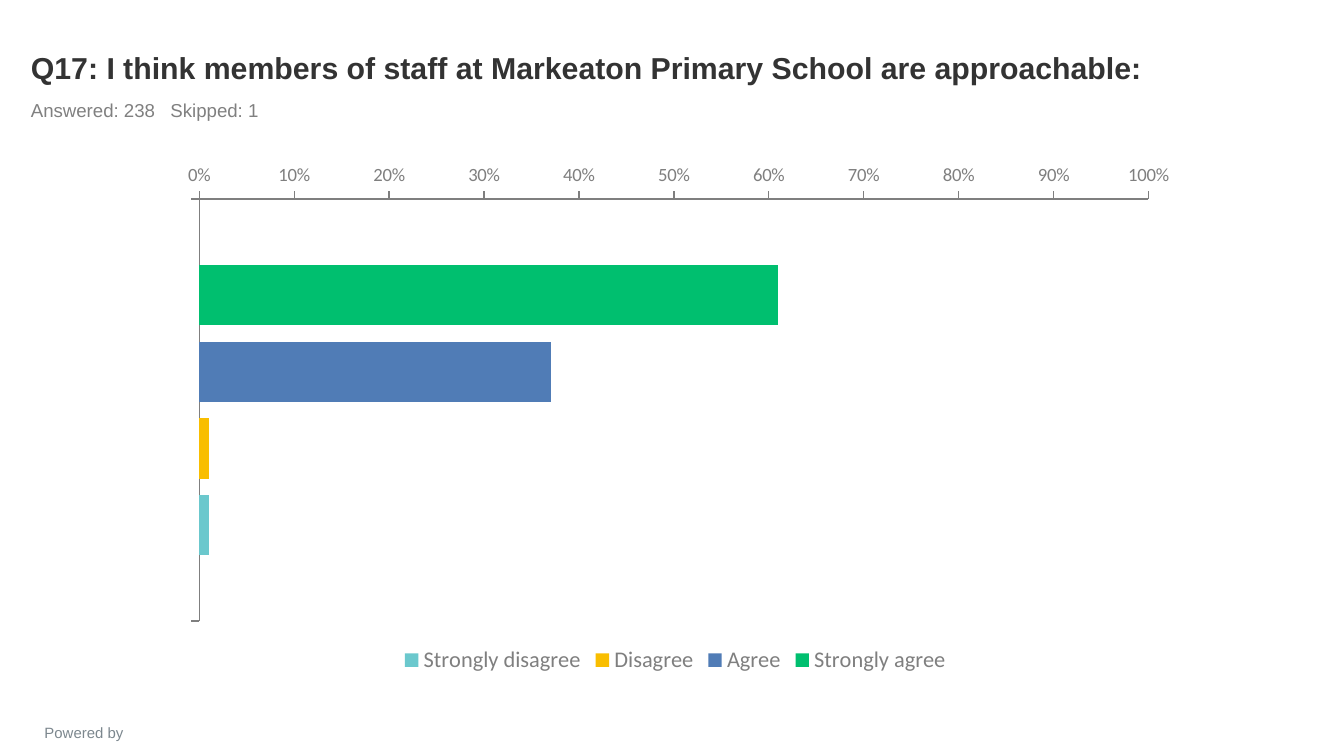
from lxml import etree
from pptx import Presentation
from pptx import util as u
from pptx.chart.data import CategoryChartData
from pptx.dml.color import RGBColor
from pptx.enum import chart as charts, text
from pptx.oxml import ns

COLORS = {
    "title": "333333",
    "subtitle": "808080",
    "axis": "7F7F7F",
    "footer": "7C878E",
}
ANSWERS = [
    ("Strongly agree", 0.61, "00BF6F"),
    ("Agree", 0.37, "507CB6"),
    ("Disagree", 0.01, "F9BE00"),
    ("Strongly disagree", 0.01, "6BC8CD"),
]


def style_font(font, name, size, color, bold=False):
    font.name = name
    font.size = u.Pt(size)
    font.bold = bold
    font.color.rgb = RGBColor.from_string(color)


def place(shape, box):
    shape.left, shape.top, shape.width, shape.height = (u.Cm(n) for n in box)


def write_line(shape, wording, size, color, align, anchor, bold=False):
    """Fill a shape with a single unbulleted line of Arial."""
    frame = shape.text_frame
    frame.text = wording
    frame.word_wrap = True
    frame.auto_size = text.MSO_AUTO_SIZE.NONE
    frame.vertical_anchor = anchor
    para = frame.paragraphs[0]
    para.alignment = align
    para.space_before = u.Pt(0)
    props = para._p.get_or_add_pPr()
    props.set("marL", "0")
    props.set("indent", "0")
    etree.SubElement(props, ns.qn("a:buNone"))
    for span in para.runs:
        style_font(span.font, "Arial", size, color, bold)


def add_heading(page, box):
    left, top, width, height = box
    title_height = 1.52
    title, body = page.shapes.title, page.placeholders[1]
    place(title, (left, top, width, title_height))
    place(body, (left, top + title_height, width, height - title_height))
    write_line(title, "Q17: I think members of staff at Markeaton Primary School are approachable:",
               16.2, COLORS["title"], text.PP_ALIGN.LEFT, text.MSO_ANCHOR.BOTTOM, bold=True)
    write_line(body, "Answered: 238   Skipped: 1",
               10, COLORS["subtitle"], text.PP_ALIGN.LEFT, text.MSO_ANCHOR.TOP)


def style_axis(axis):
    axis.has_major_gridlines = False
    axis.major_tick_mark = charts.XL_TICK_MARK.OUTSIDE
    axis.minor_tick_mark = charts.XL_TICK_MARK.NONE
    axis.format.line.color.rgb = RGBColor.from_string(COLORS["axis"])
    axis.format.line.width = u.Pt(0.75)
    style_font(axis.tick_labels.font, "Calibri", 10, COLORS["axis"])


def add_answer_chart(page, box):
    data = CategoryChartData(number_format="0%")
    data.categories = [" "]
    for name, share, _ in ANSWERS:
        data.add_series(name, [share])
    chart = page.shapes.add_chart(charts.XL_CHART_TYPE.BAR_CLUSTERED,
                                  *(u.Cm(n) for n in box), data).chart
    chart.has_title = False
    style_font(chart.font, "Calibri", 18, COLORS["title"])

    plot = chart.plots[0]
    plot.vary_by_categories = False
    plot.gap_width = 219
    plot.overlap = -27
    for series, (_, _, color) in zip(plot.series, ANSWERS):
        series.format.fill.solid()
        series.format.fill.fore_color.rgb = RGBColor.from_string(color)

    answers, shares = chart.category_axis, chart.value_axis
    style_axis(answers)
    style_axis(shares)
    answers.reverse_order = True
    answers.crosses = charts.XL_AXIS_CROSSES.MAXIMUM
    answers.tick_label_position = charts.XL_TICK_LABEL_POSITION.LOW
    shares.minimum_scale, shares.maximum_scale = 0, 1
    shares.major_unit = 0.1
    shares.tick_labels.number_format = "0%"
    shares.tick_labels.number_format_is_linked = False

    chart.has_legend = True
    chart.legend.position = charts.XL_LEGEND_POSITION.BOTTOM
    chart.legend.include_in_layout = False
    style_font(chart.legend.font, "Calibri", 12, COLORS["axis"])


def add_footer(page, box):
    footer = page.shapes.add_textbox(*(u.Cm(n) for n in box))
    write_line(footer, "Powered by", 8, COLORS["footer"],
               text.PP_ALIGN.CENTER, text.MSO_ANCHOR.TOP)


def main():
    deck = Presentation()
    deck.slide_width, deck.slide_height = u.Cm(25.4), u.Cm(14.29)
    page = deck.slides.add_slide(deck.slide_layouts[1])
    add_footer(page, (0.13, 13.56, 2.92, 0.46))
    add_heading(page, (0.33, 0.23, 22.86, 2.18))
    add_answer_chart(page, (3.05, 2.92, 19.43, 9.91))
    deck.save("out.pptx")


if __name__ == "__main__":
    main()
